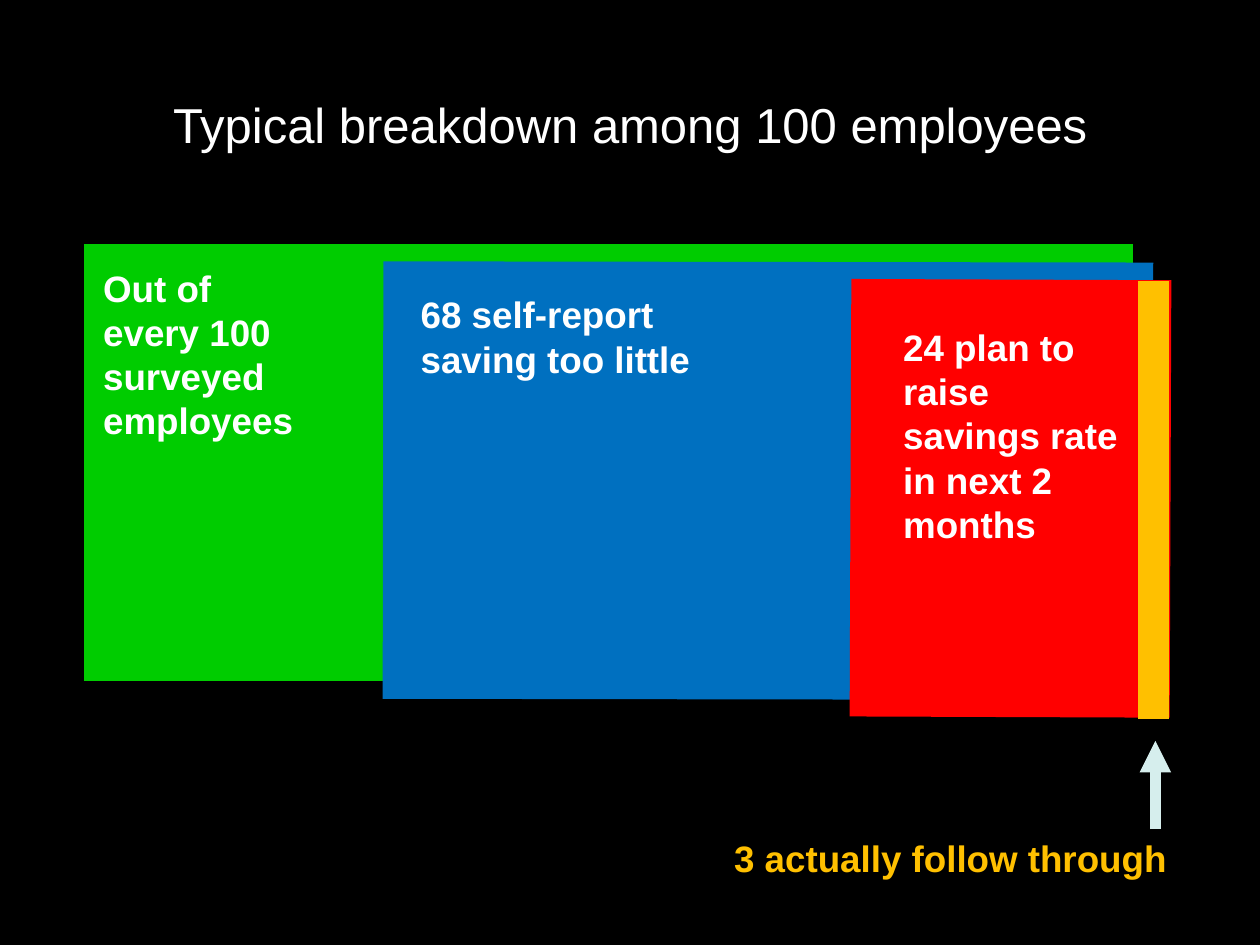
from enum import Enum

from pptx import Presentation
from pptx.dml.color import RGBColor
from pptx.enum.shapes import MSO_CONNECTOR
from pptx.enum.text import MSO_ANCHOR, PP_ALIGN
from pptx.oxml.ns import qn
from pptx.util import Inches, Pt
from lxml.etree import SubElement


class Theme(Enum):
    BLACK = RGBColor(0x00, 0x00, 0x00)
    WHITE = RGBColor(0xFF, 0xFF, 0xFF)
    GREEN = RGBColor(0x00, 0xCC, 0x00)
    BLUE = RGBColor(0x00, 0x70, 0xC0)
    RED = RGBColor(0xFF, 0x00, 0x00)
    GOLD = RGBColor(0xFF, 0xC0, 0x00)
    PALE = RGBColor(0xD6, 0xEE, 0xED)
    TITLE = Pt(28)
    LABEL = Pt(21)
    BAR = Pt(250)
    ARROW = Pt(6)
    FONT = "Arial"


deck = Presentation()
deck.slide_width, deck.slide_height = Inches(10), Inches(7.5)
slide = deck.slides.add_slide(deck.slide_layouts[6])
slide.background.fill.solid()
slide.background.fill.fore_color.rgb = Theme.BLACK.value


def add_line(ends, color, width):
    line = slide.shapes.add_connector(MSO_CONNECTOR.STRAIGHT, *map(Inches, ends))
    line.line.color.rgb = color.value
    line.line.width = width.value
    SubElement(line._element.spPr, qn("a:effectLst"))
    return line


def add_text(text, box, color, size, align):
    frame = slide.shapes.add_textbox(*map(Inches, box)).text_frame
    frame.word_wrap = True
    para = frame.paragraphs[0]
    para.text = text
    para.alignment = align
    para.font.name = Theme.FONT.value
    para.font.size = size.value
    para.font.color.rgb = color.value
    para.font.bold = size is Theme.LABEL
    return frame


title = add_text("Typical breakdown among 100 employees", (0.5, 0.22, 9, 1.03),
                 Theme.WHITE, Theme.TITLE, PP_ALIGN.CENTER)
title.vertical_anchor = MSO_ANCHOR.BOTTOM
title.margin_bottom = Inches(0.03)

# Each bar is one very thick line.
bars = [
    ((0.67, 3.67, 8.99, 3.67), Theme.GREEN),
    ((3.04, 3.81, 9.15, 3.82), Theme.BLUE),
    ((6.75, 3.95, 9.29, 3.96), Theme.RED),
    ((9.03, 3.97, 9.28, 3.97), Theme.GOLD),
]
for ends, color in bars:
    add_line(ends, color, Theme.BAR)

labels = [
    ("Out of every 100 surveyed employees", (0.72, 2.06, 1.78, 1.5),
     Theme.WHITE, PP_ALIGN.LEFT),
    ("68 self-report saving too little", (3.24, 2.27, 2.8, 0.8),
     Theme.WHITE, PP_ALIGN.LEFT),
    ("24 plan to raise savings rate in next 2 months", (7.07, 2.53, 2.04, 1.85),
     Theme.WHITE, PP_ALIGN.LEFT),
    ("3 actually follow through", (4.66, 6.58, 4.7, 0.45),
     Theme.GOLD, PP_ALIGN.RIGHT),
]
for text, box, color, align in labels:
    add_text(text, box, color, Theme.LABEL, align)

arrow = add_line((9.17, 6.58, 9.17, 5.88), Theme.PALE, Theme.ARROW)
SubElement(arrow.line._get_or_add_ln(), qn("a:tailEnd"), type="triangle")

deck.save("out.pptx")
